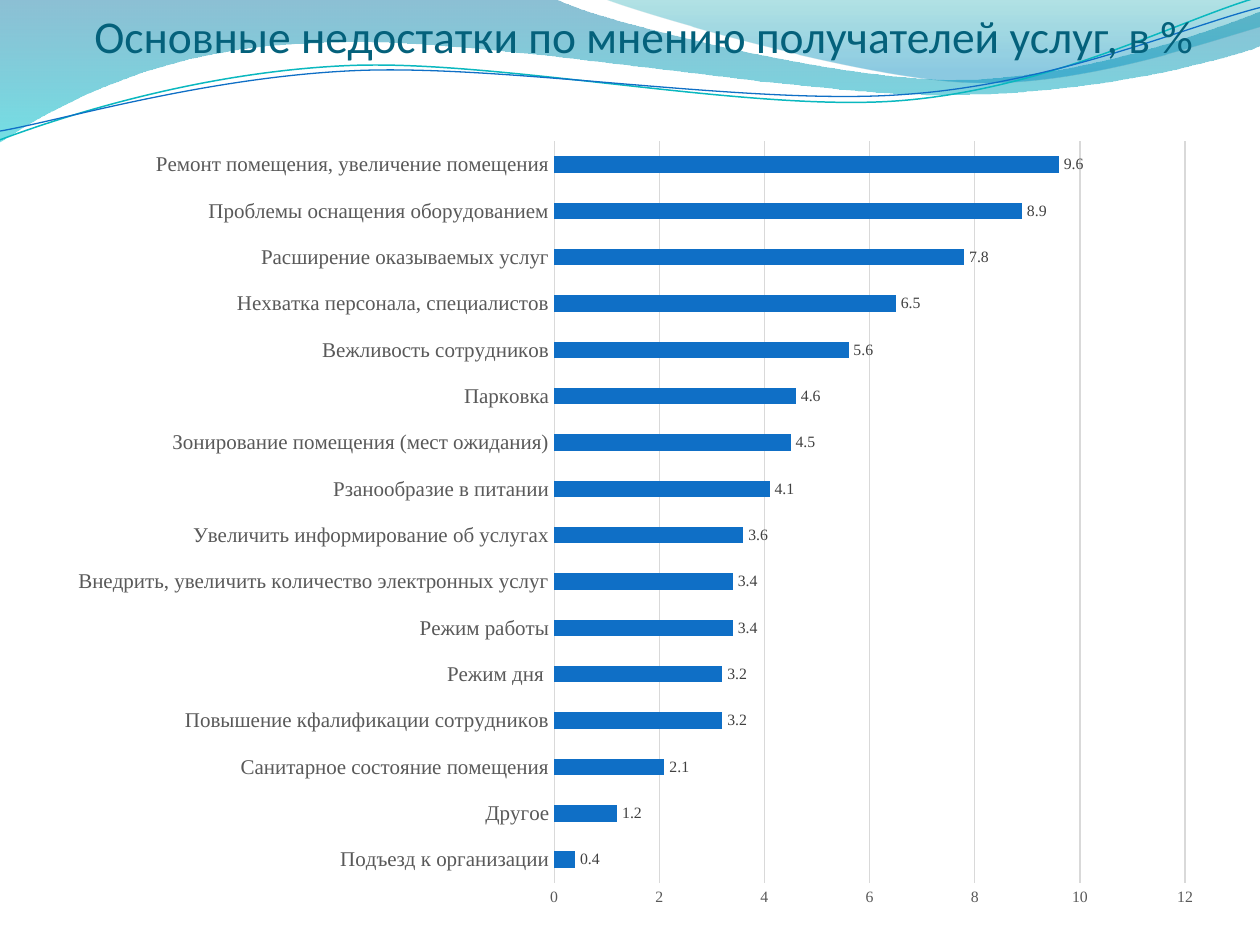
from math import cos, radians, sin

from lxml import etree
from pptx import Presentation
from pptx.chart.data import CategoryChartData as Data
from pptx.dml.color import RGBColor as RGB
from pptx.enum.chart import XL_CHART_TYPE as Kind, XL_LABEL_POSITION as Place, XL_TICK_MARK as Tick
from pptx.enum.text import MSO_ANCHOR as Anchor, MSO_AUTO_SIZE as Auto, PP_ALIGN as Align
from pptx.oxml import parse_xml
from pptx.oxml.ns import nsdecls, qn
from pptx.util import Cm, Pt

HUES = {
    "title": "04617B", "bar": "0F6FC6", "teal": "0AB8BF", "grid": "D9D9D9",
    "text": "595959", "value": "404040", "black": "000000",
    "sea": "0074A1", "aqua": "00C6CF", "mint": "00A1A9", "sky": "008BBF",
}
SERIF = "Times New Roman"
TILT = 357.3

FILLS = [
    ([(0, 0), (44, -0.1), (47.6, 1.7, 66.4, 6.3, 75.8, 6.3),
      (85.3, 6.3, 95.8, 2.6, 100, 0.9), (100.1, 3.6),
      (98.3, 4.4, 87, 7.6, 74.6, 7.5), (62.2, 7.5, 38.2, 2.8, 25.7, 3.4),
      (12.9, 3.6, 4.6, 8.3, -0.1, 11.3), (0, 0)],
     [(0, "sea", 45), (1, "aqua", 55)]),
    ([(47.9, -0.1), (50.9, 1.1, 68.2, 6.2, 76.9, 6.5),
      (85.6, 6.9, 96.1, 3.2, 100, 2.1), (100, 0), (47.9, -0.1)],
     [(0, "mint", 30), (0.8, "sky", 45)]),
]
LINES = [
    ([(0, 11.1), (4.8, 9.3, 15.8, 5.7, 27.7, 5.2),
      (39.5, 4.7, 59.3, 8.9, 71.3, 8), (83.3, 7.1, 93.8, 1.5, 99.8, -0.2)],
     (49.9, 5.75), "teal", 0.85),
    ([(0, 10.4), (4.7, 9.6, 16.4, 6.1, 28.3, 5.6),
      (40.3, 5.1, 59.7, 8.4, 71.7, 7.5), (83.6, 6.7, 94.1, 2.1, 100, 0.6)],
     (49.95, 5.9), "bar", 0.75),
]
ROWS = [
    ("Подъезд к организации", 0.4),
    ("Другое", 1.2),
    ("Санитарное состояние помещения", 2.1),
    ("Повышение кфалификации сотрудников", 3.2),
    ("Режим дня ", 3.2),
    ("Режим работы", 3.4),
    ("Внедрить, увеличить количество электронных услуг", 3.4),
    ("Увеличить информирование об услугах", 3.6),
    ("Рзанообразие в питании", 4.1),
    ("Зонирование помещения (мест ожидания)", 4.5),
    ("Парковка", 4.6),
    ("Вежливость сотрудников", 5.6),
    ("Нехватка персонала, специалистов", 6.5),
    ("Расширение оказываемых услуг", 7.8),
    ("Проблемы оснащения оборудованием", 8.9),
    ("Ремонт помещения, увеличение помещения", 9.6),
]


def hue(name):
    return RGB.from_string(HUES[name])


def style(font, size, name, face=SERIF):
    font.size, font.name = Pt(size), face
    font.color.rgb = hue(name)


def turn(part, mid, angle):
    c, s = cos(radians(angle)), sin(radians(angle))
    spots = [(x - mid[0], y - mid[1]) for x, y in zip(part[::2], part[1::2])]
    return [v for x, y in spots for v in (mid[0] + x * c - y * s, mid[1] + x * s + y * c)]


def curve(shape, parts):
    legs = iter(list(shape.element.iter(qn("a:lnTo"))))
    for part in parts[1:]:
        first = next(legs)
        if len(part) == 6:
            first.tag = qn("a:cubicBezTo")
            for _ in range(2):
                leg = next(legs)
                first.append(leg[0])
                leg.getparent().remove(leg)


def draw(shapes, box, parts, close):
    left, top, width, _ = box
    dots = [(round(left + x * width / 100), round(top + y * width / 100))
            for part in parts for x, y in zip(part[::2], part[1::2])]
    pen = shapes.build_freeform(*dots[0])
    pen.add_line_segments(dots[1:], close=close)
    shape = pen.convert_to_shape()
    shape.shadow.inherit = False
    curve(shape, parts)
    return shape


def add_waves(slide, box):
    for parts, stops in FILLS:
        shape = draw(slide.shapes, box, parts, True)
        shape.line.fill.background()
        fill = shape.fill
        fill.gradient()
        fill.gradient_angle = 270
        tags = shape.element.spPr.iter(qn("a:gs"))
        for stop, tag, (place, name, alpha) in zip(fill.gradient_stops, tags, stops):
            stop.position = place
            stop.color.rgb = hue(name)
            etree.SubElement(tag[0], qn("a:alpha"), val=str(alpha * 1000))
    group = slide.shapes.add_group_shape()
    for parts, mid, name, width in LINES:
        flat = [turn(part, mid, -TILT) for part in parts]
        shape = draw(group.shapes, box, flat, False)
        shape.rotation = TILT
        shape.fill.background()
        shape.line.color.rgb = hue(name)
        shape.line.width = Pt(width)


def add_title(slide, box):
    title = slide.shapes.title
    title.left, title.top, title.width, title.height = box
    frame = title.text_frame
    frame.text = "Основные недостатки по мнению получателей услуг, в %"
    frame.auto_size, frame.word_wrap = Auto.NONE, True
    frame.vertical_anchor = Anchor.BOTTOM
    frame.margin_left = frame.margin_right = frame.margin_bottom = 0
    frame.margin_top = Cm(0.13)
    frame.paragraphs[0].alignment = Align.LEFT
    style(frame.paragraphs[0].runs[0].font, 26, "title", "Calibri")
    slide.shapes._spTree.append(title.element)


def set_plot(chart, box, inner):
    rates = [v / side for v, side in zip(inner, box[2:] * 2)]
    sizes = "".join(f'<c:{k} val="{v:.4f}"/>' for k, v in zip("xywh", rates))
    layout = parse_xml(
        f'<c:layout {nsdecls("c")}><c:manualLayout><c:layoutTarget val="inner"/>'
        f'<c:xMode val="edge"/><c:yMode val="edge"/>{sizes}</c:manualLayout></c:layout>')
    area = chart._chartSpace.chart.plotArea
    for old in area.findall(qn("c:layout")):
        area.remove(old)
    area.insert(0, layout)


def add_bars(slide, box):
    data = Data()
    data.categories = [name for name, _ in ROWS]
    data.add_series("Series 1", [value for _, value in ROWS])
    chart = slide.shapes.add_chart(Kind.BAR_CLUSTERED, *box, data).chart
    chart.has_legend = chart.has_title = False
    style(chart.font, 10, "black")
    set_plot(chart, box, (Cm(10.08), Cm(0.34), Cm(12.72), Cm(14.95)))

    plot = chart.plots[0]
    plot.gap_width, plot.vary_by_categories = 182, False
    plot.series[0].format.fill.solid()
    plot.series[0].format.fill.fore_color.rgb = hue("bar")
    labels = plot.series[0].data_labels
    labels.show_value, labels.position = True, Place.OUTSIDE_END
    style(labels.font, 9, "value")

    names, scale = chart.category_axis, chart.value_axis
    for axis, size in ((names, 12), (scale, 9)):
        axis.major_tick_mark = axis.minor_tick_mark = Tick.NONE
        style(axis.tick_labels.font, size, "text")
    scale.minimum_scale, scale.maximum_scale, scale.major_unit = 0, 12, 2
    scale.has_major_gridlines = True
    scale.format.line.fill.background()
    for line in (names.format.line, scale.major_gridlines.format.line):
        line.color.rgb = hue("grid")
        line.width = Pt(0.75)


def main():
    deck = Presentation()
    deck.slide_width, deck.slide_height = Cm(25.4), Cm(19.05)
    slide = deck.slides.add_slide(deck.slide_layouts[5])
    add_waves(slide, (0, 0, deck.slide_width, Cm(2.9)))
    add_title(slide, (Cm(1.9), 0, Cm(22.86), Cm(1.27)))
    add_bars(slide, (Cm(1.09), Cm(2.51), Cm(23.39), Cm(16.05)))
    deck.save("out.pptx")


if __name__ == "__main__":
    main()
